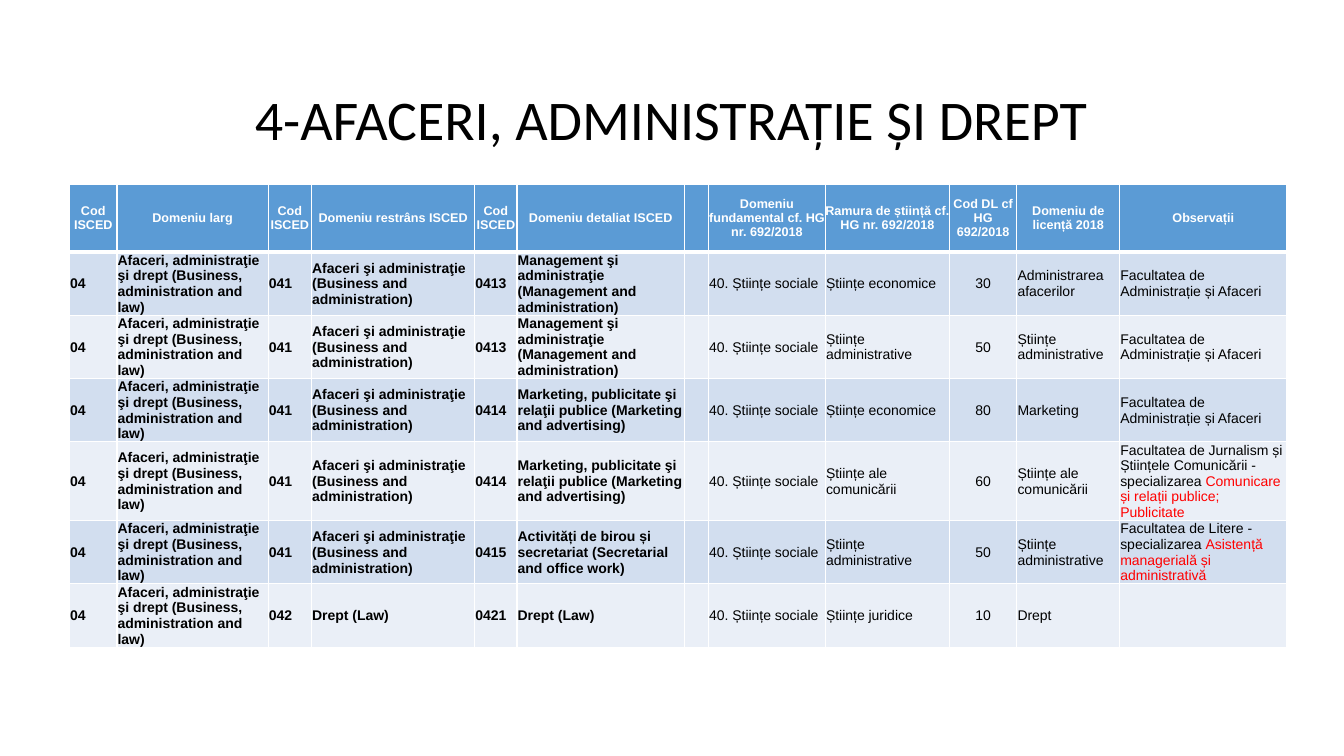
from lxml import etree
from pptx import Presentation
from pptx.dml.color import RGBColor
from pptx.enum import text
from pptx.oxml import ns
from pptx.util import Pt

WHITE = RGBColor(0xFF, 0xFF, 0xFF)
BLACK = RGBColor(0x00, 0x00, 0x00)
RED = RGBColor(0xFF, 0x00, 0x00)
HEADER_BLUE = RGBColor(0x5B, 0x9B, 0xD5)
BANDS = RGBColor(0xD2, 0xDE, 0xEF), RGBColor(0xEA, 0xEF, 0xF7)

LEFT, CENTER, JUSTIFY = (
    text.PP_ALIGN.LEFT, text.PP_ALIGN.CENTER, text.PP_ALIGN.JUSTIFY)

# Columns: heading, width, body alignment, bold body
COLUMNS = [
    ("Cod ISCED", 33.84, JUSTIFY, True),
    ("Domeniu larg", 108, LEFT, True),
    ("Cod ISCED", 30.96, JUSTIFY, True),
    ("Domeniu restrâns ISCED", 116.64, LEFT, True),
    ("Cod ISCED", 30.24, JUSTIFY, True),
    ("Domeniu detaliat ISCED", 119.52, LEFT, True),
    ("", 16.56, LEFT, False),
    ("Domeniu fundamental cf. HG nr. 692/2018", 83.52, LEFT, False),
    ("Ramura de știință cf. HG nr. 692/2018", 88.56, LEFT, False),
    ("Cod DL cf HG 692/2018", 48.24, CENTER, False),
    ("Domeniu de licență 2018", 73.44, LEFT, False),
    ("Observații", 119.52, LEFT, False),
]
HEADER_HEIGHT, ROW_HEIGHT = 48.24, 29.52

# Wording shared by several rows
BROAD = "Afaceri, administraţie şi drept (Business, administration and law)"
NARROW = {
    "041": "Afaceri şi administraţie (Business and administration)",
    "042": "Drept (Law)",
}
DETAILED = {
    "0413": "Management şi administraţie (Management and administration)",
    "0414": "Marketing, publicitate şi relaţii publice (Marketing and advertising)",
    "0415": "Activități de birou și secretariat (Secretarial and office work)",
    "0421": "Drept (Law)",
}
BUSINESS_FACULTY = "Facultatea de Administrație și Afaceri"

# Detailed code, branch of science, DL code, degree field, remark, red remark
PROGRAMMES = [
    ("0413", "Științe economice", "30", "Administrarea afacerilor",
     BUSINESS_FACULTY, ""),
    ("0413", "Științe administrative", "50", "Științe administrative",
     BUSINESS_FACULTY, ""),
    ("0414", "Științe economice", "80", "Marketing", BUSINESS_FACULTY, ""),
    ("0414", "Științe ale comunicării", "60", "Științe ale comunicării",
     "Facultatea de Jurnalism și Științele Comunicării - specializarea ",
     "Comunicare și relații publice; Publicitate"),
    ("0415", "Științe administrative", "50", "Științe administrative",
     "Facultatea de Litere - specializarea ",
     "Asistență managerială și administrativă"),
    ("0421", "Științe juridice", "10", "Drept", "", ""),
]


def set_all(target, values):
    for name, value in values.items():
        setattr(target, name, value)


def add_run(paragraph, wording, color, size, bold=False, font="Arial"):
    run = paragraph.add_run()
    run.text = wording
    set_all(run.font, {"name": font, "size": Pt(size), "bold": bold})
    run.font.color.rgb = color


def add_title(slide, wording):
    title = slide.shapes.title
    set_all(title, {"left": Pt(69.84), "top": Pt(61.2),
                    "width": Pt(828), "height": Pt(51.84)})
    set_all(title.text_frame, {"word_wrap": True,
                               "vertical_anchor": text.MSO_ANCHOR.MIDDLE})
    paragraph = title.text_frame.paragraphs[0]
    set_all(paragraph, {"alignment": CENTER, "line_spacing": 0.9})
    add_run(paragraph, wording, BLACK, 40, font="Calibri")


def add_borders(cell, widths):
    properties = cell._tc.get_or_add_tcPr()
    for side, width in widths.items():
        line = etree.SubElement(properties, ns.qn(f"a:ln{side}"), w=str(Pt(width)))
        fill = etree.SubElement(line, ns.qn("a:solidFill"))
        etree.SubElement(fill, ns.qn("a:srgbClr"), val=str(WHITE))


def fill_cell(cell, pieces, fill, alignment, size, bold, inset, borders):
    """Pieces are (wording, color) pairs; empty wording is skipped."""
    add_borders(cell, {"L": 1, "R": 1, "T": 1, "B": 1, **borders})
    cell.fill.solid()
    cell.fill.fore_color.rgb = fill
    pieces = [piece for piece in pieces if piece[0]]
    if not pieces:
        return
    set_all(cell, {"vertical_anchor": text.MSO_ANCHOR.MIDDLE,
                   "margin_left": Pt(inset), "margin_right": Pt(inset),
                   "margin_top": Pt(inset), "margin_bottom": 0})
    paragraph = cell.text_frame.paragraphs[0]
    paragraph.alignment = alignment
    for wording, color in pieces:
        add_run(paragraph, wording, color, size, bold)


def row_values(programme):
    detailed, branch, code, field, remark, red_remark = programme
    narrow = detailed[:3]
    plain = ["04", BROAD, narrow, NARROW[narrow], detailed, DETAILED[detailed],
             "", "40. Științe sociale", branch, code, field]
    return [[(value, BLACK)] for value in plain] + [
        [(remark, BLACK), (red_remark, RED)]]


def add_fields_table(slide):
    height = HEADER_HEIGHT + ROW_HEIGHT * len(PROGRAMMES)
    table = slide.shapes.add_table(
        len(PROGRAMMES) + 1, len(COLUMNS), Pt(49.68), Pt(131.76),
        Pt(sum(column[1] for column in COLUMNS)), Pt(height)).table

    # Header row
    table.rows[0].height = Pt(HEADER_HEIGHT)
    for index, (heading, width, _, _) in enumerate(COLUMNS):
        table.columns[index].width = Pt(width)
        fill_cell(table.cell(0, index), [(heading, WHITE)], HEADER_BLUE,
                  CENTER, 9, True, 0, {"B": 3})

    # Banded body rows, which grow with their text
    for row, programme in enumerate(PROGRAMMES, 1):
        table.rows[row].height = Pt(ROW_HEIGHT)
        borders = {"T": 3} if row == 1 else {}
        for index, pieces in enumerate(row_values(programme)):
            _, _, alignment, bold = COLUMNS[index]
            fill_cell(table.cell(row, index), pieces, BANDS[(row - 1) % 2],
                      alignment, 10, bold, 0.5, borders)


def main():
    presentation = Presentation()
    set_all(presentation, {"slide_width": Pt(960), "slide_height": Pt(540)})
    slide = presentation.slides.add_slide(presentation.slide_layouts[5])
    add_title(slide, "4-AFACERI, ADMINISTRAȚIE ȘI DREPT ")
    add_fields_table(slide)
    presentation.save("out.pptx")


if __name__ == "__main__":
    main()
